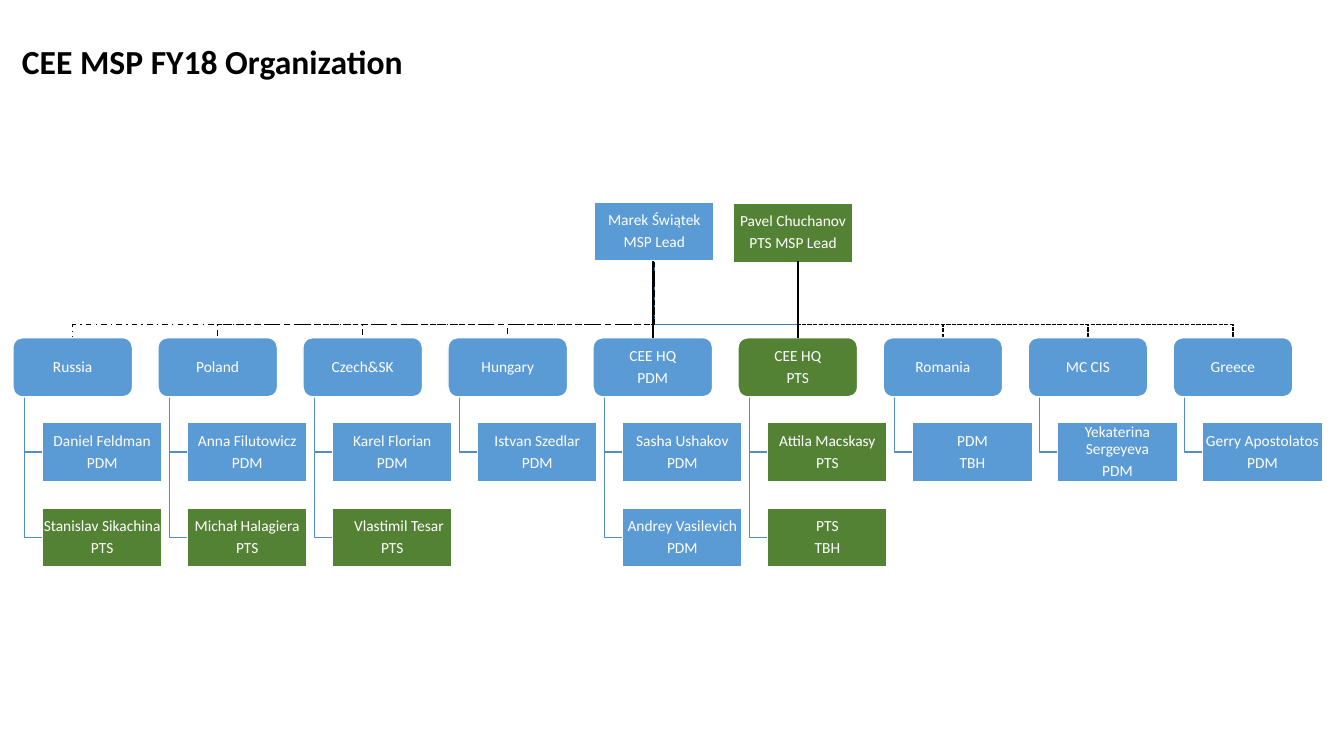
"""Builds the CEE MSP FY18 organization chart slide."""
import pptx
import pptx.dml.color
import pptx.enum.dml
import pptx.enum.shapes
import pptx.enum.text
import pptx.util
from lxml import etree

Pt = pptx.util.Pt
DASH = pptx.enum.dml.MSO_LINE
SHAPE = pptx.enum.shapes.MSO_SHAPE
BLUE, GREEN, WHITE, BLACK = "5B9BD5", "548235", "FFFFFF", "000000"
BRANCH_LINE, HQ_LINE = "538DC1", "497CAB"
BOX_WIDTH, BOX_HEIGHT = 85.4, 42.3
FIRST_LEFT, PITCH = 9.2, 103.6
UNIT_TOP, MEMBER_TOP, MEMBER_PITCH = 241.2, 301.8, 61
MEMBER_INDENT, TRUNK_INDENT = 21.1, 8.1
LEAD_TOP, LEAD_BOTTOM, LEAD_CENTER, BUS_Y = 144.2, 186.5, 467.4, 231.9

UNITS = [
    (["Russia"], BLUE, BLACK, DASH.DASH_DOT,
     [("Daniel Feldman", "PDM", BLUE), ("Stanislav Sikachina", "PTS", GREEN)]),
    (["Poland"], BLUE, BLACK, DASH.DASH,
     [("Anna Filutowicz", "PDM", BLUE), ("Michał Halagiera", "PTS", GREEN)]),
    (["Czech&SK"], BLUE, BLACK, DASH.DASH,
     [("Karel Florian", "PDM", BLUE), ("Vlastimil Tesar", "PTS", GREEN)]),
    (["Hungary"], BLUE, BLACK, DASH.DASH, [("Istvan Szedlar", "PDM", BLUE)]),
    (["CEE HQ", "PDM"], BLUE, HQ_LINE, DASH.SOLID,
     [("Sasha Ushakov", "PDM", BLUE), ("Andrey Vasilevich", "PDM", BLUE)]),
    (["CEE HQ", "PTS"], GREEN, HQ_LINE, DASH.SOLID,
     [("Attila Macskasy", "PTS", GREEN), ("PTS", "TBH", GREEN)]),
    (["Romania"], BLUE, BLACK, DASH.SQUARE_DOT, [("PDM", "TBH", BLUE)]),
    (["MC CIS"], BLUE, BLACK, DASH.SQUARE_DOT, [("Yekaterina Sergeyeva", "PDM", BLUE)]),
    (["Greece"], BLUE, BLACK, DASH.SQUARE_DOT, [("Gerry Apostolatos", "PDM", BLUE)]),
]

deck = pptx.Presentation()
deck.slide_width, deck.slide_height = Pt(960), Pt(540)
page = deck.slides.add_slide(deck.slide_layouts[6])
color = pptx.dml.color.RGBColor.from_string


def add_box(kind, left, top, fill, lines):
    box = page.shapes.add_shape(kind, Pt(left), Pt(top), Pt(BOX_WIDTH), Pt(BOX_HEIGHT))
    box.shadow.inherit = False
    box.fill.solid()
    box.fill.fore_color.rgb = color(fill)
    box.line.color.rgb = color(WHITE)
    box.line.width = Pt(1)
    frame = box.text_frame
    frame.word_wrap = True
    frame.vertical_anchor = pptx.enum.text.MSO_ANCHOR.MIDDLE
    frame.margin_left = frame.margin_right = Pt(0.7)
    frame.margin_top = frame.margin_bottom = Pt(0.7)
    for index, line in enumerate(lines):
        para = frame.add_paragraph() if index else frame.paragraphs[0]
        para.text = line
        para.alignment = pptx.enum.text.PP_ALIGN.CENTER
        para.line_spacing = 0.9
        para.space_after = Pt(4)
        para.font.name = "Calibri"
        para.font.size = Pt(11)
        para.font.color.rgb = color(WHITE)
    return box


def add_elbow(points, line_color, dash):
    corners = [(Pt(x), Pt(y)) for x, y in points]
    builder = page.shapes.build_freeform(*corners[0])
    builder.add_line_segments(corners[1:], close=False)
    elbow = builder.convert_to_shape()
    elbow.shadow.inherit = False
    elbow.fill.background()
    elbow.line.color.rgb = color(line_color)
    elbow.line.width = Pt(1)
    elbow.line.dash_style = dash


for column, (_, _, bus_color, dash, members) in reversed(list(enumerate(UNITS))):
    left = FIRST_LEFT + column * PITCH
    trunk = left + TRUNK_INDENT
    for row in reversed(range(len(members))):
        middle = MEMBER_TOP + row * MEMBER_PITCH + BOX_HEIGHT / 2
        add_elbow([(trunk, UNIT_TOP + BOX_HEIGHT), (trunk, middle),
                   (left + MEMBER_INDENT, middle)], BRANCH_LINE, DASH.SOLID)
    center = left + BOX_WIDTH / 2
    add_elbow([(LEAD_CENTER, LEAD_BOTTOM), (LEAD_CENTER, BUS_Y),
               (center, BUS_Y), (center, UNIT_TOP)], bus_color, dash)

add_box(SHAPE.RECTANGLE, LEAD_CENTER - BOX_WIDTH / 2, LEAD_TOP, BLUE,
        ["Marek Świątek", "MSP Lead"])
unit_boxes = []
member_boxes = {}
for column, (unit_lines, fill, _, _, members) in enumerate(UNITS):
    left = FIRST_LEFT + column * PITCH
    unit_boxes.append(add_box(SHAPE.ROUNDED_RECTANGLE, left, UNIT_TOP, fill, unit_lines))
    for row, (name, role, member_fill) in enumerate(members):
        member_boxes[name] = add_box(
            SHAPE.RECTANGLE, left + MEMBER_INDENT, MEMBER_TOP + row * MEMBER_PITCH,
            member_fill, [name, role])
add_box(SHAPE.RECTANGLE, 523.8, 145.1, GREEN, ["Pavel Chuchanov", "PTS MSP Lead"])

tesar_name = member_boxes["Vlastimil Tesar"].text_frame.paragraphs[0]
tesar_name._p.get_or_add_pPr().set("marL", str(Pt(9.5)))

title = page.shapes.add_textbox(Pt(8.6), Pt(25.5), Pt(294.5), Pt(36))
title.text_frame.word_wrap = False
title.text_frame.auto_size = pptx.enum.text.MSO_AUTO_SIZE.SHAPE_TO_FIT_TEXT
heading = title.text_frame.paragraphs[0]
heading.text = "CEE MSP FY18 Organization"
heading.font.name = "Calibri"
heading.font.size = Pt(24)
heading.font.bold = True
heading.font.color.rgb = color(BLACK)

for hq_box in (unit_boxes[5], unit_boxes[4]):
    center = hq_box.left + hq_box.width // 2
    link = page.shapes.add_connector(pptx.enum.shapes.MSO_CONNECTOR.STRAIGHT,
                                     center, Pt(LEAD_BOTTOM), center, hq_box.top)
    link.end_connect(hq_box, 0)
    link.line.color.rgb = color(BLACK)
    link.line.width = Pt(1.5)
    etree.SubElement(link._element.spPr, pptx.oxml.ns.qn("a:effectLst"))

deck.save("out.pptx")
